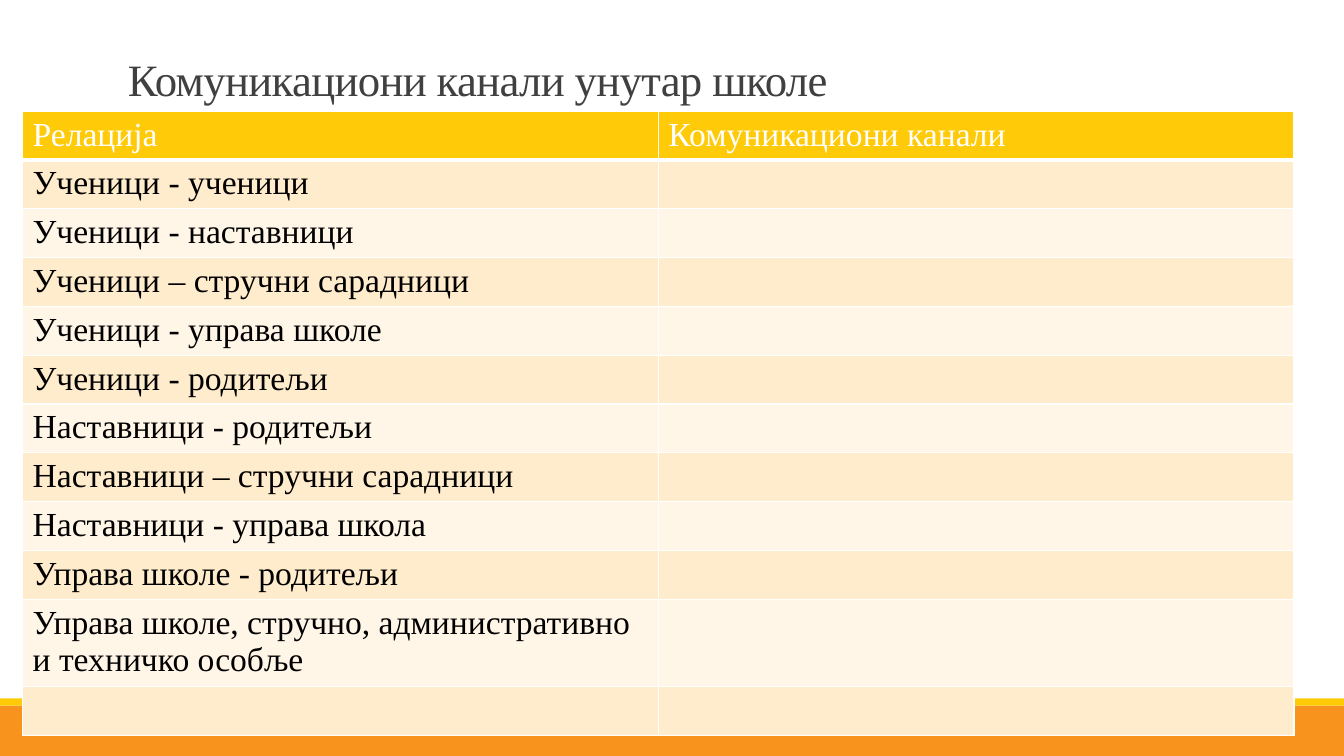
from dataclasses import dataclass

import lxml.etree
import pptx
import pptx.dml.color
import pptx.enum.shapes
import pptx.enum.text
import pptx.oxml.ns
import pptx.util
from pptx.util import Cm

FONT = "Times New Roman"
WHITE, GOLD, ORANGE = "FFFFFF", "FFCA08", "F8931D"
ROW_FILLS = ("FFECCC", "FFF6E7")
ROW_HEIGHT, TALL_ROW_HEIGHT = 1.23, 2.2
COLUMN_WIDTH = 16.02

HEADINGS = ("Релација", "Комуникациони канали")
RELATIONS = (
    "Ученици - ученици",
    "Ученици - наставници",
    "Ученици – стручни сарадници",
    "Ученици - управа школе",
    "Ученици - родитељи",
    "Наставници - родитељи",
    "Наставници – стручни сарадници",
    "Наставници - управа школа",
    "Управа школе - родитељи",
    "Управа школе, стручно, административно и техничко особље",
    "",
)
TALL_ROW = len(RELATIONS) - 1


@dataclass
class Band:
    top: float
    height: float
    color: str


BANDS = (Band(17.78, 1.27, ORANGE), Band(17.6, 0.18, GOLD))


def rgb(color: str) -> pptx.dml.color.RGBColor:
    return pptx.dml.color.RGBColor.from_string(color)


def style_paragraph(paragraph, size: float, color: str) -> None:
    paragraph.font.name = FONT
    paragraph.font.size = pptx.util.Pt(size)
    paragraph.font.bold = False
    paragraph.font.color.rgb = rgb(color)


def draw_band(slide, band: Band, width: int) -> None:
    shape = slide.shapes.add_shape(
        pptx.enum.shapes.MSO_SHAPE.RECTANGLE, 0, Cm(band.top), width, Cm(band.height))
    shape.shadow.inherit = False
    shape.fill.solid()
    shape.fill.fore_color.rgb = rgb(band.color)
    shape.line.fill.background()


def set_borders(cell, bottom: float) -> None:
    properties = cell._tc.get_or_add_tcPr()
    qn = pptx.oxml.ns.qn
    for side, points in (("L", 1), ("R", 1), ("T", 1), ("B", bottom)):
        line = lxml.etree.SubElement(
            properties, qn(f"a:ln{side}"), w=str(pptx.util.Pt(points)))
        fill = lxml.etree.SubElement(line, qn("a:solidFill"))
        lxml.etree.SubElement(fill, qn("a:srgbClr"), val=WHITE)


def fill_cell(cell, text: str, fill: str, color: str, bottom: float) -> None:
    set_borders(cell, bottom)
    cell.fill.solid()
    cell.fill.fore_color.rgb = rgb(fill)
    cell.text = text
    style_paragraph(cell.text_frame.paragraphs[0], 24, color)


def draw_title(slide) -> None:
    title = slide.shapes.title
    title.left, title.top, title.width, title.height = Cm(2.97), Cm(0.74), Cm(28.35), Cm(2.06)
    frame = title.text_frame
    frame.text = "Комуникациони канали унутар школе"
    frame.auto_size = pptx.enum.text.MSO_AUTO_SIZE.NONE
    frame.vertical_anchor = pptx.enum.text.MSO_ANCHOR.BOTTOM
    paragraph = frame.paragraphs[0]
    paragraph.alignment = pptx.enum.text.PP_ALIGN.LEFT
    paragraph.line_spacing = 0.85
    style_paragraph(paragraph, 32, "404040")
    paragraph.runs[0]._r.get_or_add_rPr().set("spc", "-50")


def draw_table(slide) -> None:
    row_count = len(RELATIONS) + 1
    height = ROW_HEIGHT * (row_count - 1) + TALL_ROW_HEIGHT
    table = slide.shapes.add_table(
        row_count, 2, Cm(0.57), Cm(2.8), Cm(2 * COLUMN_WIDTH), Cm(height)).table
    for column in table.columns:
        column.width = Cm(COLUMN_WIDTH)
    for index, row in enumerate(table.rows):
        row.height = Cm(TALL_ROW_HEIGHT if index == TALL_ROW else ROW_HEIGHT)
    for column, heading in enumerate(HEADINGS):
        fill_cell(table.cell(0, column), heading, GOLD, WHITE, 3)
    for index, relation in enumerate(RELATIONS):
        for column, text in enumerate((relation, "")):
            fill_cell(table.cell(index + 1, column), text, ROW_FILLS[index % 2], "000000", 1)


def main() -> None:
    presentation = pptx.Presentation()
    presentation.slide_width, presentation.slide_height = Cm(33.87), Cm(19.05)
    slide = presentation.slides.add_slide(presentation.slide_layouts[5])

    # Footer bands
    for band in BANDS:
        draw_band(slide, band, presentation.slide_width)

    # Title and table
    draw_title(slide)
    draw_table(slide)
    presentation.save("out.pptx")


if __name__ == "__main__":
    main()
